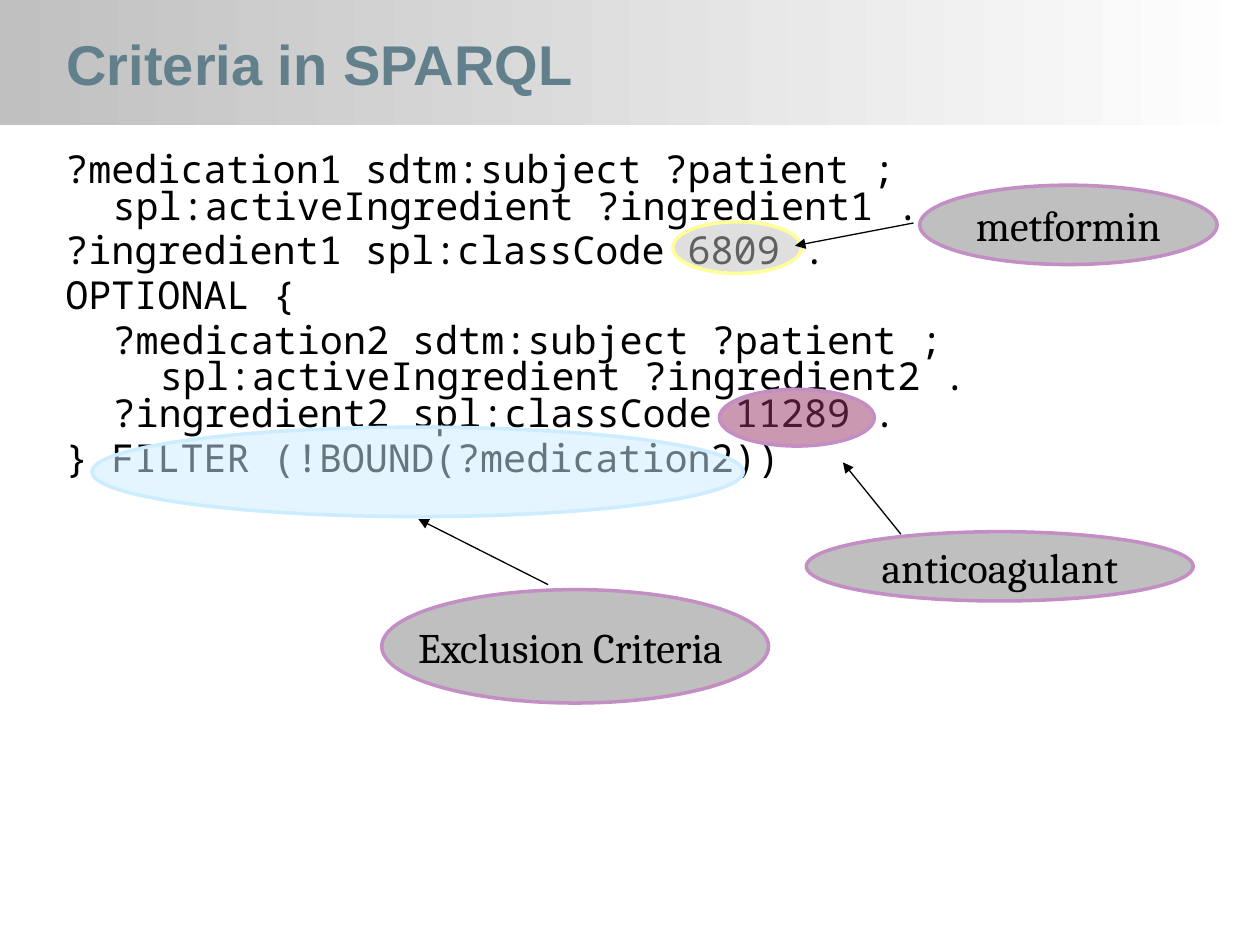
from dataclasses import dataclass

from lxml import etree
from pptx import Presentation
from pptx.dml.color import RGBColor
from pptx.enum.shapes import MSO_CONNECTOR, MSO_SHAPE
from pptx.enum.text import MSO_ANCHOR, PP_ALIGN
from pptx.oxml.ns import qn
from pptx.util import Inches, Pt

ELLIPSE, RECTANGLE = MSO_SHAPE.OVAL, MSO_SHAPE.RECTANGLE
STRAIGHT = MSO_CONNECTOR.STRAIGHT
MIDDLE, TOP = MSO_ANCHOR.MIDDLE, MSO_ANCHOR.TOP
CENTER, LEFT = PP_ALIGN.CENTER, PP_ALIGN.LEFT

COLUMNS, ROWS = 100, 75
PAGE_WIDTH, PAGE_HEIGHT = Inches(10), Inches(7.5)
INDENT_COLUMNS = 3.75


@dataclass(frozen=True)
class Theme:
    title: str = "61808B"
    ink: str = "000000"
    band_start: str = "C0C0C0"
    band_end: str = "FFFFFF"
    label_fill: str = "808080"
    label_line: str = "C38EC4"
    title_size: float = 32
    code_size: float = 22
    label_size: float = 24
    outline: float = 2
    arrow: float = 0.75
    title_font: str = "Arial"
    code_font: str = "Noto Sans Mono"
    label_font: str = "Cambria"


THEME = Theme()


@dataclass(frozen=True)
class Area:
    """A rectangle in grid columns and rows."""
    column: float
    row: float
    columns: float
    rows: float

    def lengths(self) -> tuple:
        return (across(self.column), down(self.row),
                across(self.columns), down(self.rows))


@dataclass(frozen=True)
class CodeBlock:
    text: str
    level: int = 0
    spaced: bool = True


@dataclass(frozen=True)
class Highlight:
    area: Area
    fill: str
    line: str


@dataclass(frozen=True)
class Callout:
    text: str
    area: Area
    arrow_from: tuple
    arrow_to: tuple


CODE = [
    CodeBlock("?medication1 sdtm:subject ?patient ;\vspl:activeIngredient ?ingredient1 ."),
    CodeBlock("?ingredient1 spl:classCode 6809 ."),
    CodeBlock("OPTIONAL {"),
    CodeBlock("?medication2 sdtm:subject ?patient ;\vspl:activeIngredient ?ingredient2 .", 1),
    CodeBlock("?ingredient2 spl:classCode 11289 .", 1, spaced=False),
    CodeBlock("} FILTER (!BOUND(?medication2))"),
]

ANTICOAGULANT_CODE = Highlight(Area(57.1, 30.9, 12.3, 4.5), "993366", "C38EC4")
METFORMIN_CODE = Highlight(Area(53.4, 17.6, 10.2, 4.1), "C0C0C0", "FFFF99")
FILTER_CLAUSE = Highlight(Area(7.3, 33.9, 51.7, 7.1), "CCECFF", "CCECFF")

METFORMIN = Callout("metformin", Area(73, 14.7, 23.6, 6.3), (72.5, 17.7), (63.1, 19.5))
ANTICOAGULANT = Callout("anticoagulant", Area(64, 42.2, 30.7, 5.5), (71.5, 42.4), (66.9, 36.7))
EXCLUSION = Callout("Exclusion Criteria ", Area(30.3, 46.8, 30.7, 9), (43.5, 46.4), (33.2, 41.2))

ANNOTATIONS = [ANTICOAGULANT_CODE, METFORMIN_CODE, METFORMIN,
               ANTICOAGULANT, FILTER_CLAUSE, EXCLUSION]


def across(columns: float) -> int:
    return round(PAGE_WIDTH * columns / COLUMNS)


def down(rows: float) -> int:
    return round(PAGE_HEIGHT * rows / ROWS)


def rgb(value: str) -> RGBColor:
    return RGBColor.from_string(value)


def style_span(span, font: str, size: float, color: str, bold: bool = False) -> None:
    for name, value in {"name": font, "size": Pt(size), "bold": bold}.items():
        setattr(span.font, name, value)
    span.font.color.rgb = rgb(color)


def add_text_frame(page, area: Area, anchor):
    frame = page.shapes.add_textbox(*area.lengths()).text_frame
    frame.word_wrap = True
    frame.vertical_anchor = anchor
    return frame


def draw_title(page) -> None:
    band = page.shapes.add_shape(RECTANGLE, *Area(0, 0, COLUMNS, 9.9).lengths())
    band.shadow.inherit = False
    band.line.fill.background()
    band.fill.gradient()
    band.fill.gradient_angle = 0
    for stop, color in zip(band.fill.gradient_stops, (THEME.band_start, THEME.band_end)):
        stop.color.rgb = rgb(color)
    para = add_text_frame(page, Area(4.3, 2.1, 91.7, 5.8), MIDDLE).paragraphs[0]
    para.alignment = LEFT
    span = para.add_run()
    span.text = "Criteria in SPARQL"
    style_span(span, THEME.title_font, THEME.title_size, THEME.title, bold=True)


def draw_code(page) -> None:
    frame = add_text_frame(page, Area(4.2, 11.7, 91.7, 55), TOP)
    for index, block in enumerate(CODE):
        para = frame.add_paragraph() if index else frame.paragraphs[0]
        para.text = block.text
        para.line_spacing = 0.8
        para.space_before = Pt(0.2 * THEME.code_size if block.spaced else 0)
        properties = para._p.get_or_add_pPr()
        properties.set("marL", str(across(INDENT_COLUMNS * (block.level + 1))))
        properties.set("indent", str(-across(INDENT_COLUMNS)))
        for span in para.runs:
            style_span(span, THEME.code_font, THEME.code_size, THEME.ink)


def draw_ellipse(shapes, area: Area, fill: str, line: str):
    """Draw an outlined ellipse with a half-transparent fill."""
    ellipse = shapes.add_shape(ELLIPSE, *area.lengths())
    ellipse.shadow.inherit = False
    ellipse.fill.solid()
    ellipse.fill.fore_color.rgb = rgb(fill)
    color = ellipse._element.spPr.find(qn("a:solidFill")).find(qn("a:srgbClr"))
    etree.SubElement(color, qn("a:alpha"), val="50000")
    ellipse.line.color.rgb = rgb(line)
    ellipse.line.width = Pt(THEME.outline)
    return ellipse


def draw_arrow(shapes, start: tuple, end: tuple) -> None:
    arrow = shapes.add_connector(STRAIGHT, across(start[0]), down(start[1]),
                                 across(end[0]), down(end[1]))
    arrow.line.color.rgb = rgb(THEME.ink)
    arrow.line.width = Pt(THEME.arrow)
    etree.SubElement(arrow.line._get_or_add_ln(), qn("a:tailEnd"), type="triangle")
    etree.SubElement(arrow._element.spPr, qn("a:effectLst"))


def draw_callout(page, callout: Callout) -> None:
    group = page.shapes.add_group_shape()
    label = draw_ellipse(group.shapes, callout.area, THEME.label_fill, THEME.label_line)
    frame = label.text_frame
    frame.word_wrap = False
    frame.vertical_anchor = MIDDLE
    para = frame.paragraphs[0]
    para.alignment = CENTER
    span = para.add_run()
    span.text = callout.text
    style_span(span, THEME.label_font, THEME.label_size, THEME.ink)
    draw_arrow(group.shapes, callout.arrow_from, callout.arrow_to)


def main() -> None:
    deck = Presentation()
    deck.slide_width, deck.slide_height = PAGE_WIDTH, PAGE_HEIGHT
    page = deck.slides.add_slide(deck.slide_layouts[6])
    draw_title(page)
    draw_code(page)
    for item in ANNOTATIONS:
        if isinstance(item, Callout):
            draw_callout(page, item)
        else:
            draw_ellipse(page.shapes, item.area, item.fill, item.line)
    deck.save("out.pptx")


if __name__ == "__main__":
    main()
